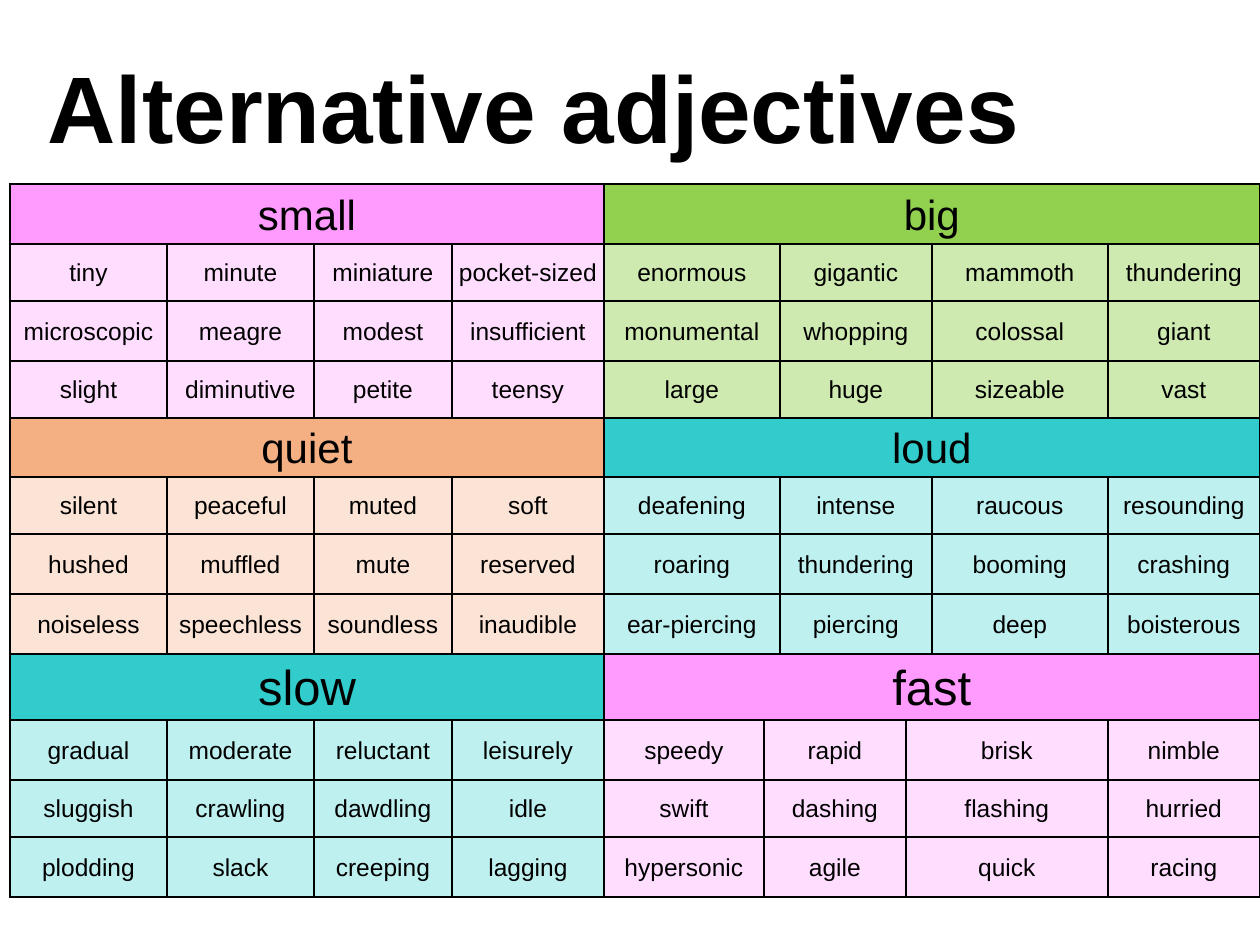
from lxml import etree
from pptx import Presentation
from pptx.dml.color import RGBColor
from pptx.enum.text import MSO_ANCHOR, MSO_AUTO_SIZE, PP_ALIGN
from pptx.oxml.ns import qn
from pptx.util import Emu, Pt

MID = MSO_ANCHOR.MIDDLE
FIXED = MSO_AUTO_SIZE.NONE
LEFT, MIDDLE = PP_ALIGN.LEFT, PP_ALIGN.CENTER
SCALE = 914400 / 126  # EMU per px

COLS = [157, 147, 138, 152, 160, 16, 126, 26, 176, 152]
ROWS = [60, 57, 60, 57, 59, 57, 60, 60, 66, 60, 57, 60]
HALF, END = 4, len(COLS)
DEPTH = 4  # rows in a group: one heading, three of words

# Columns at which the four words of a group start
WEST, EAST, FAST = (0, 1, 2, 3), (4, 6, 8, 9), (4, 5, 7, 9)

PINK = ("FF9BFF", "FFDDFF")
GREEN = ("92D050", "CEEAB0")
PEACH = ("F4B083", "FBE4D5")
TEAL = ("33CCCC", "BEF0EF")

# Heading, heading size, colours, starts, rows of words
GROUPS = [
    ("small", 24, PINK, WEST, ["tiny minute miniature pocket-sized",
                               "microscopic meagre modest insufficient",
                               "slight diminutive petite teensy"]),
    ("big", 24, GREEN, EAST, ["enormous gigantic mammoth thundering",
                              "monumental whopping colossal giant",
                              "large huge sizeable vast"]),
    ("quiet", 24, PEACH, WEST, ["silent peaceful muted soft",
                                "hushed muffled mute reserved",
                                "noiseless speechless soundless inaudible"]),
    ("loud", 24, TEAL, EAST, ["deafening intense raucous resounding",
                              "roaring thundering booming crashing",
                              "ear-piercing piercing deep boisterous"]),
    ("slow", 28, TEAL, WEST, ["gradual moderate reluctant leisurely",
                              "sluggish crawling dawdling idle",
                              "plodding slack creeping lagging"]),
    ("fast", 28, PINK, FAST, ["speedy rapid brisk nimble",
                              "swift dashing flashing hurried",
                              "hypersonic agile quick racing"]),
]


def px(num):
    return Emu(round(num * SCALE))


def tint(hexa):
    return RGBColor.from_string(hexa)


def assign(item, values):
    for name, value in values.items():
        setattr(item, name, value)


def write(frame, text, size, bold, align, gap):
    para = frame.paragraphs[0]
    para.text = text
    assign(para, {"alignment": align, "line_spacing": gap})
    font = para.runs[0].font
    assign(font, {"name": "Arial", "size": Pt(size), "bold": bold})
    font.color.rgb = tint("000000")


def border(cell):
    props = cell._tc.get_or_add_tcPr()
    for side in ("a:lnL", "a:lnR", "a:lnT", "a:lnB"):
        line = etree.SubElement(props, qn(side), w=str(Pt(1)))
        fill = etree.SubElement(line, qn("a:solidFill"))
        etree.SubElement(fill, qn("a:srgbClr"), val="000000")


def put(table, row, start, stop, text, size, color):
    """Write one word across the columns from start up to stop."""
    for col in range(start, stop):
        part = table.cell(row, col)
        border(part)
        part.fill.solid()
        part.fill.fore_color.rgb = tint(color)
    cell = table.cell(row, start)
    if stop - start > 1:
        cell.merge(table.cell(row, stop - 1))
    assign(cell, {"vertical_anchor": MID, "margin_left": px(6),
                  "margin_right": px(6), "margin_top": 0, "margin_bottom": 0})
    write(cell.text_frame, text, size, False, MIDDLE, 1.07)


def add_title(slide, text):
    title = slide.shapes.title
    assign(title, {"left": px(35), "top": px(26),
                   "width": px(1162), "height": px(173)})
    assign(title.text_frame, {"vertical_anchor": MID, "word_wrap": True,
                              "auto_size": FIXED})
    write(title.text_frame, text, 54, True, LEFT, 0.9)


def add_grid(slide):
    frame = slide.shapes.add_table(len(ROWS), END, px(10), px(184),
                                   px(sum(COLS)), px(sum(ROWS)))
    table = frame.table
    assign(table, {"first_row": False, "horz_banding": False})
    for col, width in zip(table.columns, COLS):
        col.width = px(width)
    for row, height in zip(table.rows, ROWS):
        row.height = px(height)
    return table


def add_group(table, top, group):
    head, size, (dark, light), starts, lines = group
    stop = HALF if starts == WEST else END
    put(table, top, starts[0], stop, head, size, dark)
    stops = starts[1:] + (stop,)
    for row, line in enumerate(lines, top + 1):
        for start, end, word in zip(starts, stops, line.split()):
            put(table, row, start, end, word, 14, light)


def main():
    deck = Presentation()
    assign(deck, {"slide_width": px(1260), "slide_height": px(945)})
    slide = deck.slides.add_slide(deck.slide_layouts[5])

    # Title
    add_title(slide, "Alternative adjectives")

    # Word table, two groups side by side
    table = add_grid(slide)
    for num, group in enumerate(GROUPS):
        add_group(table, num // 2 * DEPTH, group)

    deck.save("out.pptx")


if __name__ == "__main__":
    main()
